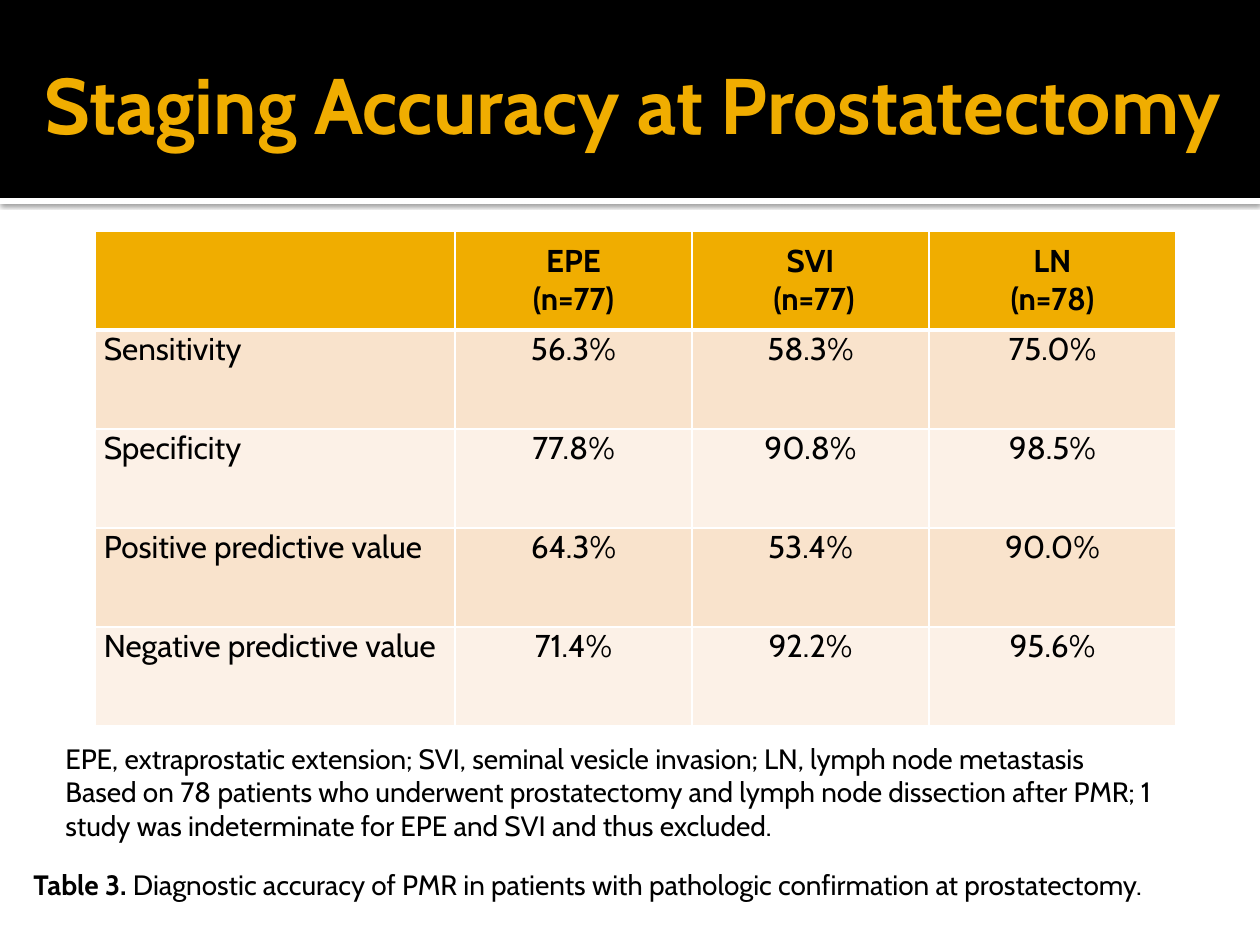
import pptx
import pptx.util
import pptx.dml.color
import pptx.enum.shapes
import pptx.enum.text
import pptx.oxml
import pptx.oxml.ns

PX = 914400 / 126
FONT = "Cabin"
BLACK, WHITE, GOLD = "000000", "FFFFFF", "F0AD00"
BANDS = ["F9E3CC", "FCF1E7"]
CENTER = pptx.enum.text.PP_ALIGN.CENTER
LEFT = pptx.enum.text.PP_ALIGN.LEFT
TOP = pptx.enum.text.MSO_ANCHOR.TOP
MIDDLE = pptx.enum.text.MSO_ANCHOR.MIDDLE

COLUMN_WIDTHS = [360, 237, 237, 247]
ROW_HEIGHT = 99
ROWS = [
    ["", "EPE\n(n=77)", "SVI\n (n=77)", "LN\n(n=78)"],
    ["Sensitivity", "56.3%", "58.3%", "75.0%"],
    ["Specificity", "77.8%", "90.8%", "98.5%"],
    ["Positive predictive value", "64.3%", "53.4%", "90.0%"],
    ["Negative predictive value", "71.4%", "92.2%", "95.6%"],
]
NOTES = (
    "EPE, extraprostatic extension; SVI, seminal vesicle invasion; LN, lymph node metastasis\n"
    "Based on 78 patients who underwent prostatectomy and lymph node dissection after PMR; "
    "1 study was indeterminate for EPE and SVI and thus excluded."
)


def px(length):
    return pptx.util.Emu(round(length * PX))


def color(value):
    return pptx.dml.color.RGBColor.from_string(value)


def xml(tag, attributes, content):
    namespace = pptx.oxml.ns.nsdecls("a")
    return pptx.oxml.parse_xml(f"<a:{tag} {namespace} {attributes}>{content}</a:{tag}>")


def write_text(frame, text, size=18, bold=False, align=LEFT, lead=""):
    """Fill a text frame, one paragraph a line; lead is a bold opening run."""
    for index, line in enumerate(text.split("\n")):
        paragraph = frame.paragraphs[0] if index == 0 else frame.add_paragraph()
        paragraph.alignment = align
        pieces = [(lead, True)] if lead and index == 0 else []
        for content, is_bold in pieces + [(line, bold)]:
            run = paragraph.add_run()
            run.text = content
            run.font.name = FONT
            run.font.size = pptx.util.Pt(size)
            run.font.bold = is_bold
            run.font.color.rgb = color(BLACK)


def add_band(slide, top, height, fill):
    shape = slide.shapes.add_shape(
        pptx.enum.shapes.MSO_SHAPE.RECTANGLE, 0, px(top), px(1260), px(height))
    shape.shadow.inherit = False
    shape.fill.solid()
    shape.fill.fore_color.rgb = color(fill)
    shape.line.fill.background()
    return shape


def add_drop_shadow(shape):
    effects = shape._element.spPr.find(pptx.oxml.ns.qn("a:effectLst"))
    effects.append(xml(
        "outerShdw", 'blurRad="31750" dist="10160" dir="5400000" rotWithShape="0"',
        f'<a:srgbClr val="{BLACK}"><a:alpha val="60000"/></a:srgbClr>'))


def add_text(slide, left, top, width, height, text, **text_format):
    shape = slide.shapes.add_textbox(px(left), px(top), px(width), px(height))
    shape.text_frame.word_wrap = True
    write_text(shape.text_frame, text, **text_format)
    return shape


def add_title(slide, text):
    shape = add_text(slide, 32, 16, 1218, 173, text, size=45, bold=True)
    frame = shape.text_frame
    frame.vertical_anchor = MIDDLE
    frame.margin_right = pptx.util.Inches(0.05)
    frame.paragraphs[0].runs[0].font.color.rgb = color(GOLD)


def set_borders(cell, bottom):
    properties = cell._tc.get_or_add_tcPr()
    widths = {"lnL": 1, "lnR": 1, "lnT": 1, "lnB": bottom}
    for index, (side, width) in enumerate(widths.items()):
        properties.insert(index, xml(
            side, f'w="{pptx.util.Pt(width)}"',
            f'<a:solidFill><a:srgbClr val="{WHITE}"/></a:solidFill>'))


def add_accuracy_table(slide):
    table = slide.shapes.add_table(
        len(ROWS), len(COLUMN_WIDTHS), px(95), px(231),
        px(sum(COLUMN_WIDTHS)), px(ROW_HEIGHT * len(ROWS))).table
    for column, width in zip(table.columns, COLUMN_WIDTHS):
        column.width = px(width)
    for row_index, values in enumerate(ROWS):
        table.rows[row_index].height = px(ROW_HEIGHT)
        header = row_index == 0
        for column_index, value in enumerate(values):
            cell = table.cell(row_index, column_index)
            cell.margin_left = cell.margin_right = pptx.util.Inches(0.07)
            cell.margin_top = cell.margin_bottom = 0
            cell.vertical_anchor = MIDDLE if header else TOP
            cell.fill.solid()
            cell.fill.fore_color.rgb = color(GOLD if header else BANDS[(row_index - 1) % 2])
            set_borders(cell, bottom=3 if header else 1)
            if value:
                write_text(cell.text_frame, value, bold=header,
                           align=CENTER if column_index else LEFT)


def main():
    presentation = pptx.Presentation()
    presentation.slide_width, presentation.slide_height = px(1260), px(945)
    slide = presentation.slides.add_slide(presentation.slide_layouts[6])
    add_drop_shadow(add_band(slide, 198, 6, WHITE))
    add_band(slide, 0, 198, BLACK)
    add_title(slide, "Staging Accuracy at Prostatectomy")
    add_accuracy_table(slide)
    add_text(slide, 53, 735, 1166, 115, NOTES, size=16)
    add_text(slide, 21, 861, 1239, 84,
             " Diagnostic accuracy of PMR in patients with pathologic confirmation at prostatectomy.",
             size=16, lead="Table 3.")
    presentation.save("out.pptx")


if __name__ == "__main__":
    main()
